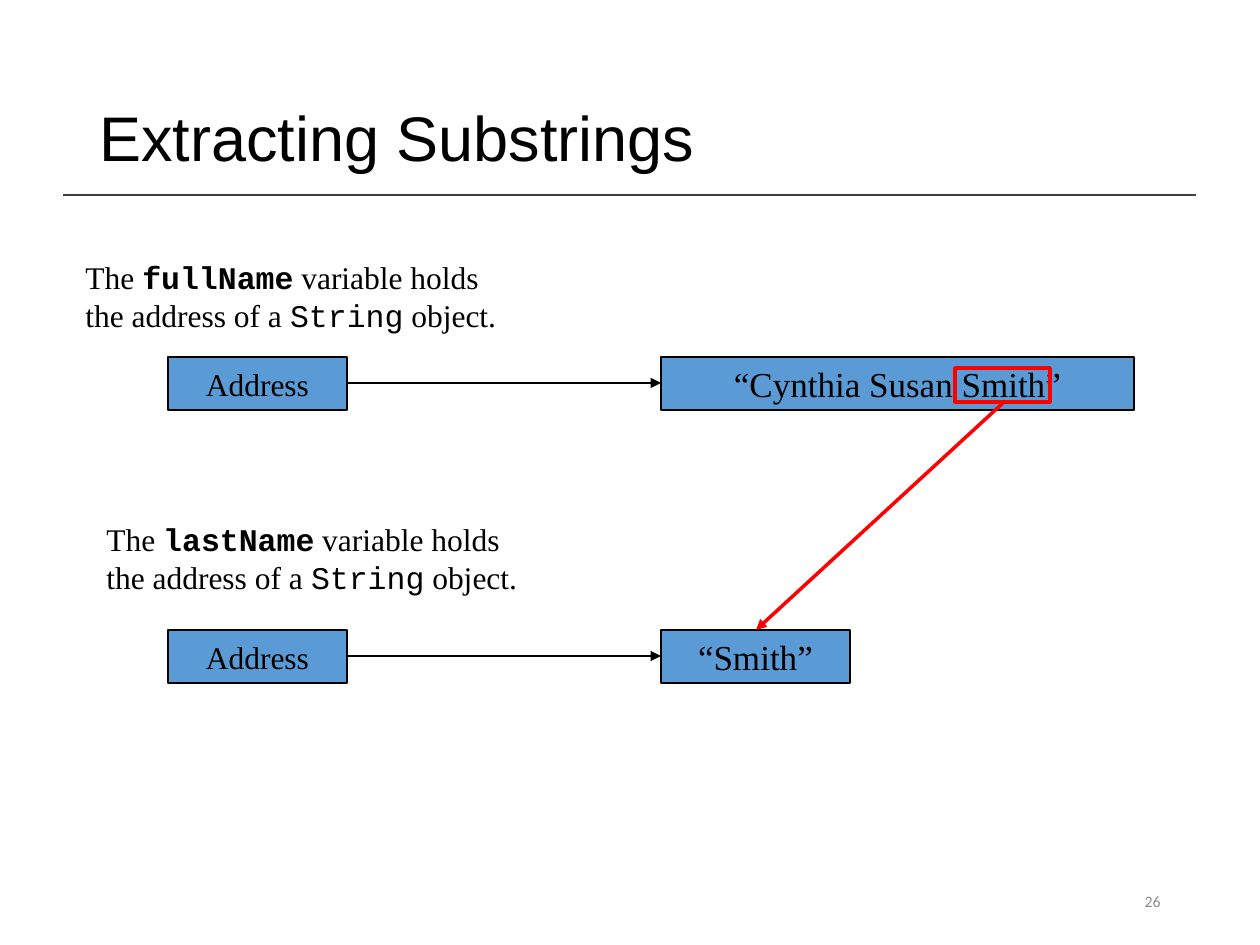
from dataclasses import dataclass

from lxml.etree import SubElement
from pptx import Presentation
from pptx.dml.color import RGBColor
from pptx.enum.shapes import MSO_CONNECTOR as Connector, MSO_SHAPE as Shape
from pptx.enum.text import MSO_ANCHOR as Anchor, PP_ALIGN as Align
from pptx.oxml.ns import qn
from pptx.slide import Slide
from pptx.util import Emu, Pt

PX_PER_INCH = 126
BLACK, RED, BLUE = "000000", "FF0000", "5B9BD5"
SERIF, MONO = "Times New Roman", "Courier New"


def px(length):
    return Emu(round(length * 914400 / PX_PER_INCH))


def color(value):
    return RGBColor.from_string(value)


@dataclass
class SlideBuilder:
    """Draws styled elements on the current slide."""

    slide: Slide
    font: str = SERIF
    text_color: str = BLACK
    line_width: float = 0.75

    def add_runs(self, shape, runs, size, align=Align.LEFT, anchor=Anchor.TOP,
                 wrap=True, text_color=None, spacing=None):
        frame = shape.text_frame
        frame.word_wrap = wrap
        frame.vertical_anchor = anchor
        paragraph = frame.paragraphs[0]
        paragraph.alignment = align
        paragraph.line_spacing = spacing
        for text, font, bold in runs:
            run = paragraph.add_run()
            run.text = text
            run.font.name = font
            run.font.size = Pt(size)
            run.font.bold = bold
            run.font.color.rgb = color(text_color or self.text_color)

    def text(self, left, top, width, height, runs, size, **style):
        box = self.slide.shapes.add_textbox(*map(px, (left, top, width, height)))
        self.add_runs(box, runs, size, **style)

    def box(self, left, top, width, height, fill=None, line=BLACK,
            line_width=None, label=None, size=18):
        shape = self.slide.shapes.add_shape(
            Shape.RECTANGLE, *map(px, (left, top, width, height)))
        shape.shadow.inherit = False
        if fill:
            shape.fill.solid()
            shape.fill.fore_color.rgb = color(fill)
        else:
            shape.fill.background()
        shape.line.color.rgb = color(line)
        shape.line.width = Pt(line_width or self.line_width)
        if label:
            self.add_runs(shape, [(label, self.font, False)], size,
                          Align.CENTER, Anchor.MIDDLE, wrap=False)

    def line(self, start, end, line=BLACK, line_width=None, arrow=True):
        connector = self.slide.shapes.add_connector(
            Connector.STRAIGHT, *map(px, (*start, *end)))
        connector.line.color.rgb = color(line)
        connector.line.width = Pt(line_width or self.line_width)
        properties = connector.element.spPr
        if arrow:
            SubElement(properties.find(qn("a:ln")), qn("a:tailEnd"), type="triangle")
        SubElement(properties, qn("a:effectLst"))

    def reference(self, top, value, value_width):
        address_left, address_width, value_left, height = 168, 179, 661, 53
        self.box(address_left, top, address_width, height, BLUE, label="Address")
        self.box(value_left, top, value_width, height, BLUE, label=value, size=20)
        middle = top + height // 2
        self.line((address_left + address_width, middle), (value_left, middle))

    def caption(self, left, top, width, variable):
        runs = [
            ("The ", SERIF, False),
            (variable, MONO, True),
            (" variable holds the address of a ", SERIF, False),
            ("String", MONO, False),
            (" object.", SERIF, False),
        ]
        self.text(left, top, width, 88, runs, 18)


def main():
    presentation = Presentation()
    presentation.slide_width = px(1260)
    presentation.slide_height = px(945)
    builder = SlideBuilder(presentation.slides.add_slide(presentation.slide_layouts[6]))

    builder.line((63, 195), (1196, 195), "404040", 1, arrow=False)
    builder.text(87, 50, 1086, 183, [("Extracting Substrings", "Arial", False)], 36,
                 anchor=Anchor.MIDDLE, spacing=0.9)

    builder.caption(73, 252, 462, "fullName")
    builder.reference(357, "“Cynthia Susan Smith”", 473)
    builder.caption(94, 514, 451, "lastName")
    builder.reference(630, "“Smith”", 189)

    builder.box(955, 368, 95, 34, line=RED, line_width=2)
    builder.line((1003, 403), (756, 630), RED, 2)

    builder.text(890, 876, 283, 50, [("26", "Calibri", False)], 9,
                 align=Align.RIGHT, anchor=Anchor.MIDDLE, text_color="8C8C8C")
    presentation.save("out.pptx")


if __name__ == "__main__":
    main()
